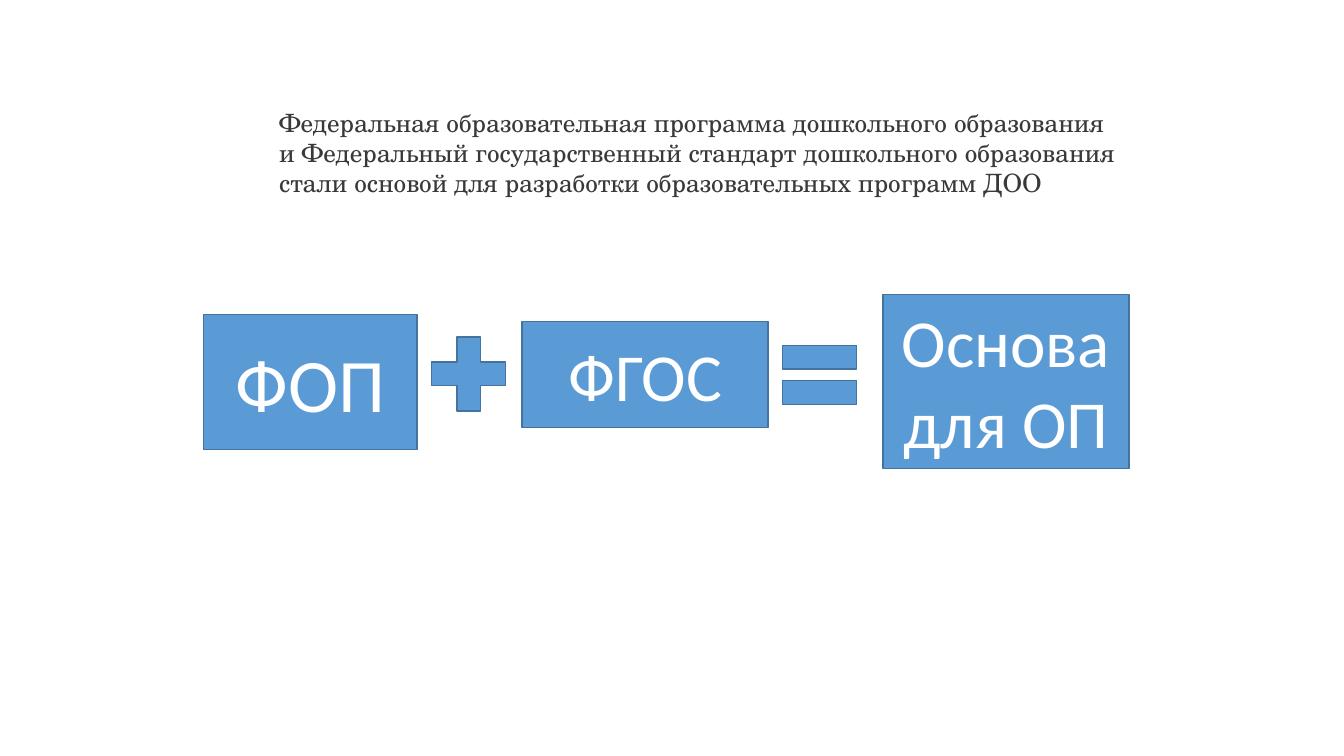
import pptx
import pptx.util
import pptx.dml.color
import pptx.enum.shapes
import pptx.enum.text

Pt = pptx.util.Pt
RGBColor = pptx.dml.color.RGBColor
SHAPE = pptx.enum.shapes.MSO_SHAPE
ALIGN = pptx.enum.text.PP_ALIGN
ANCHOR = pptx.enum.text.MSO_ANCHOR

BLUE = RGBColor(0x5B, 0x9B, 0xD5)
DARK_BLUE = RGBColor(0x43, 0x73, 0x9E)
WHITE = RGBColor(0xFF, 0xFF, 0xFF)
DARK_GRAY = RGBColor(0x3B, 0x38, 0x38)

HEADING_LINES = [
    "Федеральная образовательная программа дошкольного образования",
    "и Федеральный государственный стандарт дошкольного образования",
    "стали основой для разработки образовательных программ ДОО",
]

# Preset, left and top within the equation, width, height, text, text size
EQUATION_PARTS = [
    (SHAPE.RECTANGLE, 0, 14.4, 152.6, 96.5, "ФОП", 54),
    (SHAPE.MATH_PLUS, 153.4, 20.9, 72, 72, "", 0),
    (SHAPE.RECTANGLE, 227.6, 19.4, 175.7, 75.6, "ФГОС", 48),
    (SHAPE.MATH_EQUAL, 404, 21.6, 72, 72, "", 0),
    (SHAPE.RECTANGLE, 485.3, 0, 175.7, 124.6, "Основа для ОП", 48),
]


def fill_heading(slide, left, top, width, height):
    """Place the three-line heading in the title placeholder."""
    title = slide.shapes.title
    title.left, title.top = Pt(left), Pt(top)
    title.width, title.height = Pt(width), Pt(height)
    frame = title.text_frame
    frame.text = "\n".join(HEADING_LINES)
    frame.word_wrap = False
    frame.auto_size = pptx.enum.text.MSO_AUTO_SIZE.SHAPE_TO_FIT_TEXT
    frame.vertical_anchor = ANCHOR.TOP
    for paragraph in frame.paragraphs:
        paragraph.alignment = ALIGN.LEFT
        paragraph.line_spacing = 1.0
        paragraph.space_before = Pt(0)
        paragraph.font.name = "TeX Gyre Schola"
        paragraph.font.size = Pt(18)
        paragraph.font.color.rgb = DARK_GRAY


def add_equation(slide, left, top):
    """Draw the terms and signs of the equation from its top left corner."""
    for preset, x, y, width, height, text, size in EQUATION_PARTS:
        shape = slide.shapes.add_shape(
            preset, Pt(left + x), Pt(top + y), Pt(width), Pt(height))
        shape.shadow.inherit = False
        shape.fill.solid()
        shape.fill.fore_color.rgb = BLUE
        shape.line.color.rgb = DARK_BLUE
        shape.line.width = Pt(1)
        if text:
            frame = shape.text_frame
            frame.text = text
            frame.word_wrap = True
            frame.vertical_anchor = ANCHOR.MIDDLE
            paragraph = frame.paragraphs[0]
            paragraph.alignment = ALIGN.CENTER
            paragraph.font.name = "Calibri"
            paragraph.font.size = Pt(size)
            paragraph.font.color.rgb = WHITE


def main():
    presentation = pptx.Presentation()
    presentation.slide_width = Pt(960)
    presentation.slide_height = Pt(540)

    # Title Only layout
    slide = presentation.slides.add_slide(presentation.slide_layouts[5])
    fill_heading(slide, 192.2, 72.7, 614.2, 72.7)
    add_equation(slide, 145.4, 210.2)

    presentation.save("out.pptx")


if __name__ == "__main__":
    main()
